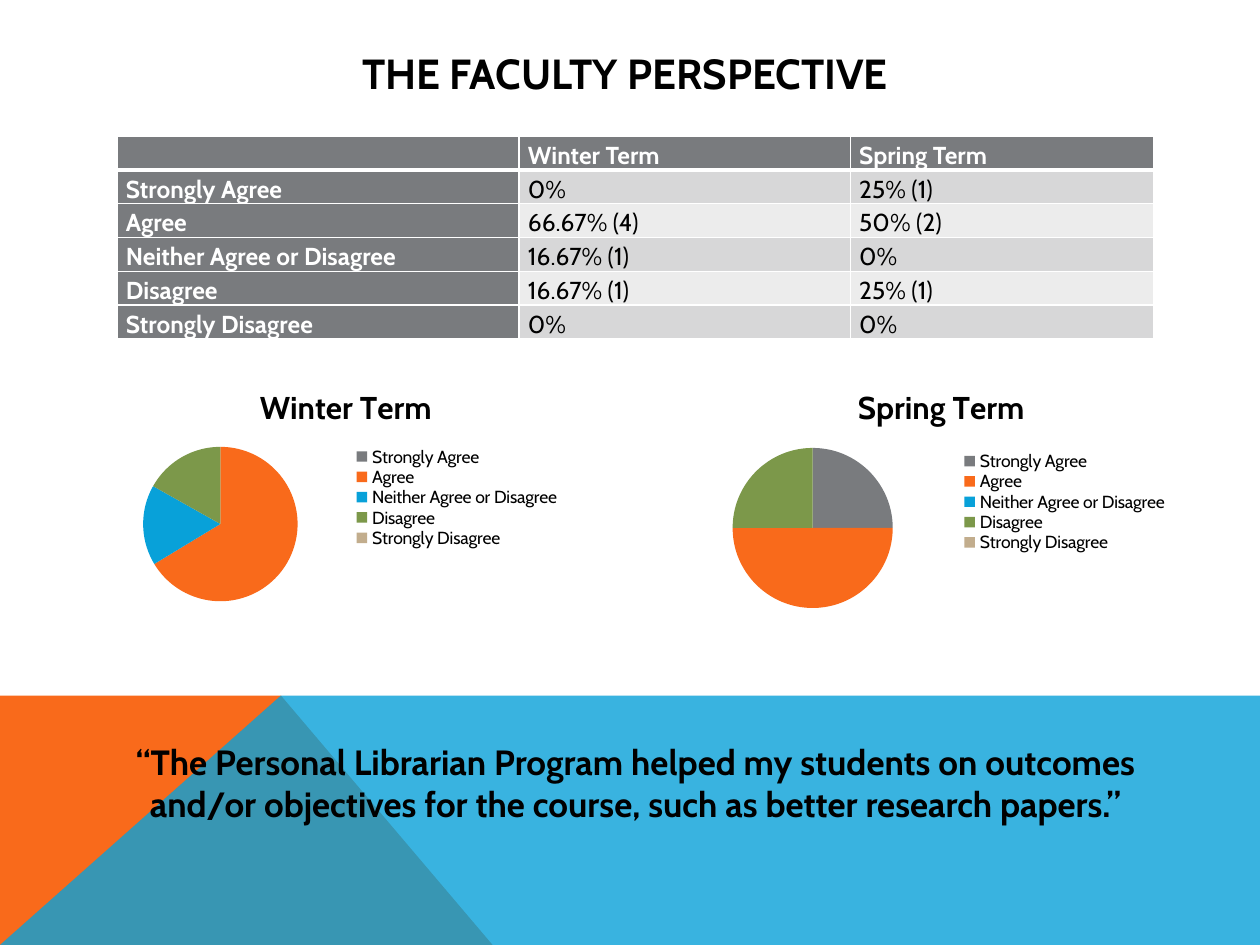
import dataclasses
import typing

import lxml.etree
import pptx
import pptx.chart.data
import pptx.dml.color
import pptx.enum.chart
import pptx.enum.text
import pptx.oxml
import pptx.oxml.ns
import pptx.util

Inches = pptx.util.Inches
Pt = pptx.util.Pt
Box = tuple[float, float, float, float]


@dataclasses.dataclass(frozen=True)
class Theme:
    font: str = "Cabin"
    black: str = "000000"
    white: str = "FFFFFF"
    gray: str = "797B7E"
    orange: str = "F96A1B"
    blue: str = "08A1D9"
    green: str = "7C984A"
    tan: str = "C2AD8D"
    bands: tuple[str, str] = ("D7D7D8", "ECECEC")
    title_size: int = 24
    quote_size: int = 20
    chart_title_size: int = 18
    table_size: int = 14
    chart_size: int = 10


THEME = Theme()


@dataclasses.dataclass(frozen=True)
class Polygon:
    points: tuple[tuple[float, float], ...]
    color: str
    opacity: int = 100


@dataclasses.dataclass(frozen=True)
class Caption:
    text: str
    box: Box
    size: int


@dataclasses.dataclass(frozen=True)
class Pie:
    title: str
    values: tuple[int, ...]
    box: Box
    plot: Box
    legend: Box


ANSWERS = ("Strongly Agree", "Agree", "Neither Agree or Disagree", "Disagree", "Strongly Disagree")
SLICE_COLORS = (THEME.gray, THEME.orange, THEME.blue, THEME.green, THEME.tan)
WINTER = ("0%", "66.67% (4)", "16.67% (1)", "16.67% (1)", "0%")
SPRING = ("25% (1)", "50% (2)", "0%", "25% (1)", "0%")
TABLE_ROWS = (("", "Winter Term", "Spring Term"), *zip(ANSWERS, WINTER, SPRING))
TABLE_BOX = (0.93, 1.08, 8.23, 1.61)
COLUMN_WIDTHS = (3.19, 2.63, 2.41)

POLYGONS = (
    Polygon(((0, 7.5), (0, 5.52), (2.23, 5.52), (3.91, 7.5)), THEME.orange),
    Polygon(((0, 7.5), (2.23, 5.52), (10, 5.52), (10, 7.5)), THEME.blue, 80),
)
CAPTIONS = (
    Caption("THE FACULTY PERSPECTIVE", (0.42, 0.33, 9.08, 0.5), THEME.title_size),
    Caption(
        "“The Personal Librarian Program helped my students on outcomes "
        "and/or objectives for the course, such as better research papers.”",
        (0.67, 5.83, 8.75, 0.77),
        THEME.quote_size,
    ),
)
PIES = (
    Pie("Winter Term", (0, 67, 17, 17, 0), (0.83, 2.92, 3.83, 2),
        (0.08, 0.31, 0.32, 0.62), (0.48, 0.31, 0.5, 0.4)),
    Pie("Spring Term", (25, 50, 0, 25, 0), (5.43, 2.92, 4.08, 2.05),
        (0.09, 0.31, 0.32, 0.62), (0.5, 0.32, 0.48, 0.39)),
)


def rgb(color: str) -> pptx.dml.color.RGBColor:
    return pptx.dml.color.RGBColor.from_string(color)


def fill_solid(fill: typing.Any, color: str) -> None:
    fill.solid()
    fill.fore_color.rgb = rgb(color)


def style_font(font: typing.Any, size: int, color: str, bold: bool) -> None:
    font.name = THEME.font
    font.size = Pt(size)
    font.bold = bold
    font.color.rgb = rgb(color)


def draw_polygon(slide: typing.Any, polygon: Polygon) -> None:
    points = [(Inches(x), Inches(y)) for x, y in polygon.points]
    builder = slide.shapes.build_freeform(*points[0])
    builder.add_line_segments(points[1:], close=True)
    shape = builder.convert_to_shape()
    shape.shadow.inherit = False
    shape.line.fill.background()
    fill_solid(shape.fill, polygon.color)
    if polygon.opacity < 100:
        color = shape.fill._xPr.find(".//" + pptx.oxml.ns.qn("a:srgbClr"))
        alpha = lxml.etree.SubElement(color, pptx.oxml.ns.qn("a:alpha"))
        alpha.set("val", str(polygon.opacity * 1000))


def draw_caption(slide: typing.Any, caption: Caption) -> None:
    frame = slide.shapes.add_textbox(*map(Inches, caption.box)).text_frame
    frame.word_wrap = True
    frame.auto_size = pptx.enum.text.MSO_AUTO_SIZE.SHAPE_TO_FIT_TEXT
    paragraph = frame.paragraphs[0]
    paragraph.text = caption.text
    paragraph.alignment = pptx.enum.text.PP_ALIGN.CENTER
    style_font(paragraph.font, caption.size, THEME.black, True)


def add_borders(cell: typing.Any, top: int, bottom: int) -> None:
    properties = cell._tc.get_or_add_tcPr()
    sides = (("lnL", 1), ("lnR", 1), ("lnT", top), ("lnB", bottom))
    for index, (side, width) in enumerate(sides):
        border = pptx.oxml.parse_xml(
            f'<a:{side} {pptx.oxml.ns.nsdecls("a")} w="{Pt(width)}"><a:solidFill>'
            f'<a:srgbClr val="{THEME.white}"/></a:solidFill></a:{side}>'
        )
        properties.insert(index, border)


def draw_table(slide: typing.Any) -> None:
    frame = slide.shapes.add_table(len(TABLE_ROWS), len(COLUMN_WIDTHS), *map(Inches, TABLE_BOX))
    table = frame.table
    for column, width in zip(table.columns, COLUMN_WIDTHS):
        column.width = Inches(width)
    for row, texts in enumerate(TABLE_ROWS):
        for column, text in enumerate(texts):
            heading = row == 0 or column == 0
            cell = table.cell(row, column)
            cell.margin_left = cell.margin_right = Inches(0.07)
            cell.margin_top = cell.margin_bottom = 0
            fill_solid(cell.fill, THEME.gray if heading else THEME.bands[(row - 1) % 2])
            add_borders(cell, 3 if row == 1 else 1, 3 if row == 0 else 1)
            paragraph = cell.text_frame.paragraphs[0]
            paragraph.text = text
            paragraph.line_spacing = 1.15
            style_font(paragraph.font, THEME.table_size, THEME.white if heading else THEME.black, heading)


def place_inside(element: typing.Any, box: Box, target: str = "") -> None:
    x, y, width, height = box
    inner = f'<c:layoutTarget val="{target}"/>' if target else ""
    layout = pptx.oxml.parse_xml(
        f'<c:layout {pptx.oxml.ns.nsdecls("c")}><c:manualLayout>{inner}'
        f'<c:xMode val="edge"/><c:yMode val="edge"/><c:x val="{x}"/><c:y val="{y}"/>'
        f'<c:w val="{width}"/><c:h val="{height}"/></c:manualLayout></c:layout>'
    )
    for previous in element.findall(pptx.oxml.ns.qn("c:layout")):
        element.remove(previous)
    position = element.find(pptx.oxml.ns.qn("c:legendPos"))
    element.insert(0 if position is None else 1, layout)


def draw_pie(slide: typing.Any, pie: Pie) -> None:
    data = pptx.chart.data.CategoryChartData()
    data.categories = ANSWERS
    data.add_series("Series 1", pie.values)
    chart = slide.shapes.add_chart(
        pptx.enum.chart.XL_CHART_TYPE.PIE, *map(Inches, pie.box), data
    ).chart
    style_font(chart.font, THEME.chart_size, THEME.black, False)
    chart.has_title = True
    title = chart.chart_title.text_frame.paragraphs[0]
    title.text = pie.title
    style_font(title.font, THEME.chart_title_size, THEME.black, True)
    chart.has_legend = True
    chart.legend.position = pptx.enum.chart.XL_LEGEND_POSITION.RIGHT
    chart.legend.include_in_layout = False
    plot = chart.plots[0]
    plot.vary_by_categories = True
    for index, color in enumerate(SLICE_COLORS):
        fill_solid(plot.series[0].points[index].format.fill, color)
    place_inside(chart._chartSpace.chart.plotArea, pie.plot, "inner")
    place_inside(chart.legend._element, pie.legend)


def main() -> None:
    presentation = pptx.Presentation()
    presentation.slide_width, presentation.slide_height = Inches(10), Inches(7.5)
    slide = presentation.slides.add_slide(presentation.slide_layouts[6])
    for polygon in POLYGONS:
        draw_polygon(slide, polygon)
    for caption in CAPTIONS:
        draw_caption(slide, caption)
    draw_table(slide)
    for pie in PIES:
        draw_pie(slide, pie)
    presentation.save("out.pptx")


if __name__ == "__main__":
    main()
